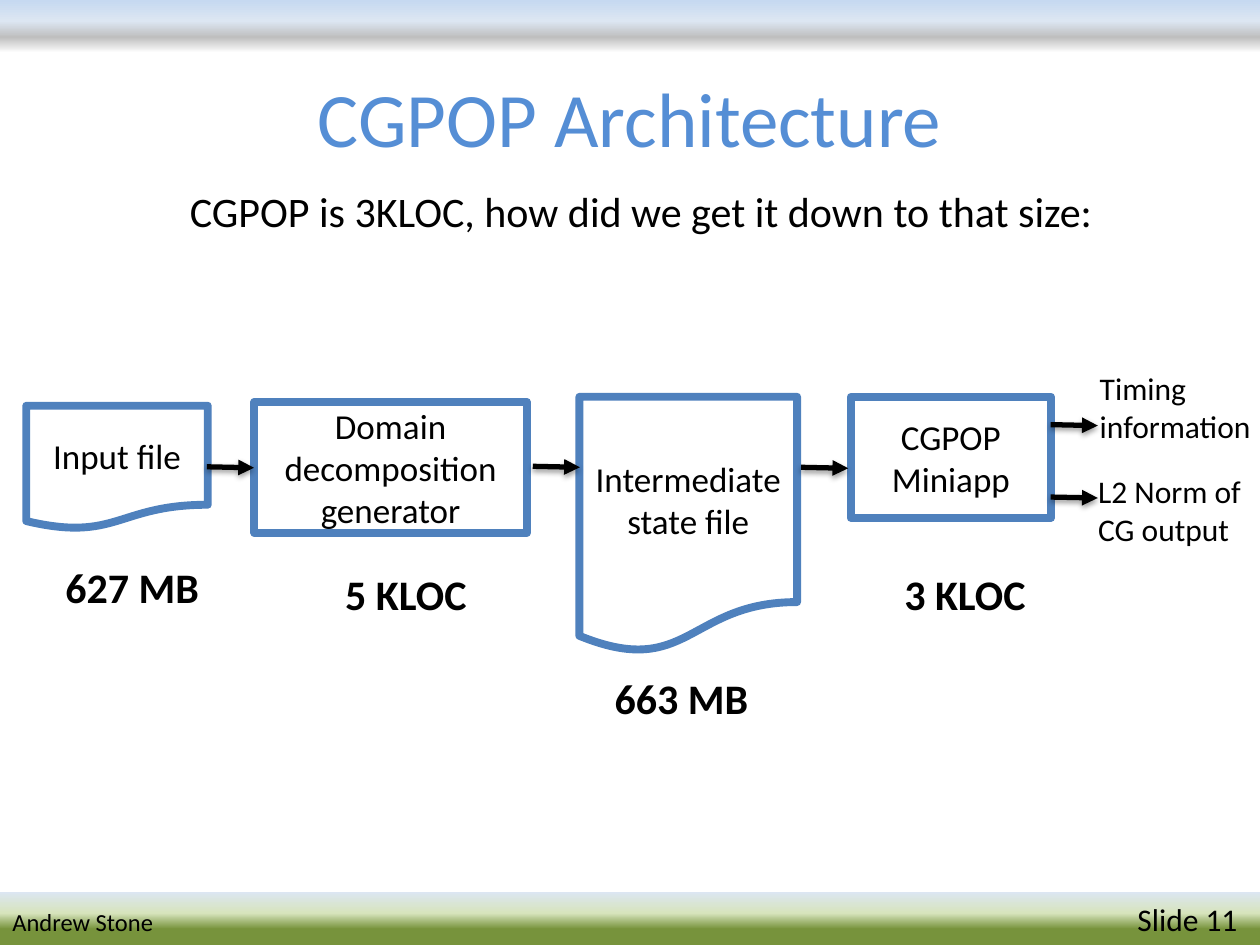
import pptx
import pptx.util
import pptx.dml.color
import pptx.enum.shapes
import pptx.enum.text
import pptx.oxml
import pptx.oxml.ns
from lxml import etree

Cm, Pt = pptx.util.Cm, pptx.util.Pt
RGB = pptx.dml.color.RGBColor
KIND = pptx.enum.shapes.MSO_SHAPE
ALIGN = pptx.enum.text.PP_ALIGN
ANCHOR = pptx.enum.text.MSO_ANCHOR
qn = pptx.oxml.ns.qn

BLACK = RGB(0x00, 0x00, 0x00)
WHITE = RGB(0xFF, 0xFF, 0xFF)
BLUE = RGB(0x4F, 0x81, 0xBD)
SKY = RGB(0x55, 0x8E, 0xD5)
PALE = RGB(0xDC, 0xE6, 0xF2)
HEAD = [(0, RGB(0xC6, 0xD9, 0xF1)), (40, PALE), (70, RGB(0xBF, 0xBF, 0xBF)), (100, WHITE)]
FOOT = [(0, PALE), (40, RGB(0xD7, 0xE4, 0xBD)), (70, RGB(0x77, 0x93, 0x3C))]

WIDE, HIGH, BAND = 25.4, 19.05, 1.07
SHADE = (
    '<a:effectLst xmlns:a="http://schemas.openxmlformats.org/drawingml/2006/main">'
    '<a:outerShdw blurRad="40000" dist="20000" dir="5400000" rotWithShape="0">'
    '<a:srgbClr val="000000"><a:alpha val="38000"/></a:srgbClr>'
    '</a:outerShdw></a:effectLst>'
)


def style(item, size, color=BLACK, bold=False):
    """Set the font of a paragraph or a run."""
    font = item.font
    font.name, font.size, font.bold = "Calibri", Pt(size), bold
    font.color.rgb = color


def place(shape, *box):
    shape.left, shape.top, shape.width, shape.height = map(Cm, box)


def add_title(slide, text):
    title = slide.shapes.title
    place(title, 1.27, 0.76, 22.86, 3.18)
    title.text_frame.text = text
    title.text_frame.vertical_anchor = ANCHOR.MIDDLE
    para = title.text_frame.paragraphs[0]
    para.alignment = ALIGN.CENTER
    style(para, 44, SKY)


def add_band(slide, top, stops):
    """Full-width bar, shaded from top to bottom."""
    band = slide.shapes.add_shape(KIND.RECTANGLE, *map(Cm, (0, top, WIDE, BAND)))
    band.shadow.inherit = False
    band.line.fill.background()
    band.fill.gradient()
    band.fill.gradient_angle = 270
    steps = band._element.spPr.find(".//" + qn("a:gsLst"))
    for old in list(steps):
        steps.remove(old)
    for spot, color in stops:
        step = etree.SubElement(steps, qn("a:gs"), pos=str(spot * 1000))
        etree.SubElement(step, qn("a:srgbClr"), val=str(color))
    return band


def add_foot(band, name, page):
    para = band.text_frame.paragraphs[0]
    para.alignment = ALIGN.LEFT
    tabs = etree.SubElement(para._p.get_or_add_pPr(), qn("a:tabLst"))
    etree.SubElement(tabs, qn("a:tab"), pos=str(Cm(22.68)), algn="l")
    for text, size in ((name + " \t", 14), (page, 18)):
        run = para.add_run()
        run.text = text
        style(run, size)


def add_step(slide, kind, text, *box):
    shape = slide.shapes.add_shape(kind, *map(Cm, box))
    shape.shadow.inherit = False
    shape.fill.solid()
    shape.fill.fore_color.rgb = WHITE
    shape.line.color.rgb = BLUE
    shape.line.width = Pt(4.5)
    shape.text_frame.text = text
    shape.text_frame.vertical_anchor = ANCHOR.MIDDLE
    para = shape.text_frame.paragraphs[0]
    para.alignment = ALIGN.CENTER
    style(para, 20)


def add_note(slide, text, size, box, bold=False, wrap=False):
    frame = slide.shapes.add_textbox(*map(Cm, box)).text_frame
    frame.word_wrap = wrap
    frame.auto_size = pptx.enum.text.MSO_AUTO_SIZE.SHAPE_TO_FIT_TEXT
    frame.text = text
    for para in frame.paragraphs:
        style(para, size, bold=bold)


def add_arrow(slide, left, top):
    ends = map(Cm, (left, top, left + 0.95, top + 0.02))
    arrow = slide.shapes.add_connector(pptx.enum.shapes.MSO_CONNECTOR.STRAIGHT, *ends)
    arrow.line.color.rgb = BLACK
    arrow.line.width = Pt(3)
    etree.SubElement(arrow.line._get_or_add_ln(), qn("a:tailEnd"), type="triangle")
    arrow._element.spPr.append(pptx.oxml.parse_xml(SHADE))


def main():
    deck = pptx.Presentation()
    deck.slide_width, deck.slide_height = Cm(WIDE), Cm(HIGH)
    slide = deck.slides.add_slide(deck.slide_layouts[5])

    # Title and bands
    add_title(slide, "CGPOP Architecture")
    add_band(slide, 0, HEAD)
    add_foot(add_band(slide, HIGH - BAND, FOOT), "Andrew Stone", "Slide 11")
    add_note(slide, "CGPOP is 3KLOC, how did we get it down to that size:",
             24, (3.58, 3.61, 19.89, 1.27), wrap=True)

    # Programs and files
    code, file = KIND.RECTANGLE, KIND.FLOWCHART_DOCUMENT
    add_step(slide, code, "Domain decomposition generator", 5.13, 8.1, 5.49, 2.64)
    add_step(slide, code, "CGPOP Miniapp", 17.15, 8, 4.04, 2.44)
    add_step(slide, file, "Input file", 0.53, 8.18, 3.66, 2.49)
    add_step(slide, file, "Intermediate state file", 11.68, 8, 4.39, 5.16)

    # Sizes
    for text, left, top, width in (
        ("3 KLOC", 17.98, 11.33, 2.97),
        ("5 KLOC", 6.71, 11.33, 2.97),
        ("627 MB", 1.07, 11.2, 3.23),
        ("663 MB", 12.14, 13.44, 3.23),
    ):
        add_note(slide, text, 24, (left, top, width, 1.27), bold=True)

    # Results
    add_note(slide, "Timing\ninformation", 18, (21.92, 7.32, 3.58, 1.8))
    add_note(slide, "L2 Norm of\nCG output", 18, (21.89, 9.4, 3.43, 1.8))

    # Flow
    for left, top in ((4.17, 9.41), (10.74, 9.4), (16.15, 9.42), (21.18, 8.56), (21.18, 10.02)):
        add_arrow(slide, left, top)

    deck.save("out.pptx")


if __name__ == "__main__":
    main()
